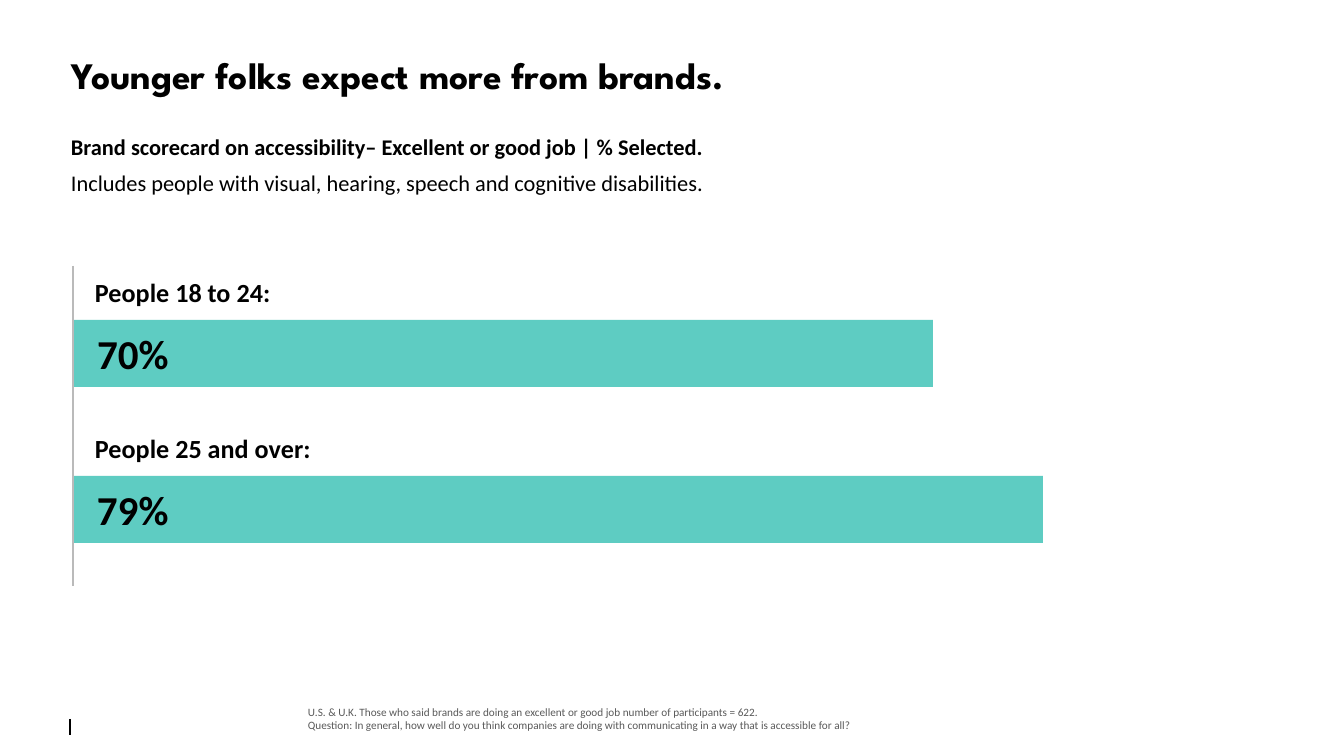
from lxml import etree
from pptx import Presentation
from pptx.dml.color import RGBColor
from pptx.enum.shapes import MSO_CONNECTOR, MSO_SHAPE
from pptx.enum.text import MSO_ANCHOR, MSO_AUTO_SIZE, PP_ALIGN
from pptx.oxml.ns import qn
from pptx.util import Pt

STRAIGHT = MSO_CONNECTOR.STRAIGHT
RECTANGLE = MSO_SHAPE.RECTANGLE
TOP, MIDDLE, BOTTOM = MSO_ANCHOR.TOP, MSO_ANCHOR.MIDDLE, MSO_ANCHOR.BOTTOM
NO_AUTOFIT = MSO_AUTO_SIZE.NONE
LEFT = PP_ALIGN.LEFT

BLACK = RGBColor(0x00, 0x00, 0x00)
GRAY = RGBColor(0x59, 0x59, 0x59)
AXIS_GRAY = RGBColor(0xBA, 0xBA, 0xBA)
TEAL = RGBColor(0x3B, 0xC1, 0xB5)

SLIDE_W, SLIDE_H = 1344, 756
MARGIN = 71
AXIS_X = 73
FIRST_BAR_Y, BAR_STEP, BAR_H = 320, 156, 67
PX_PER_PERCENT = 12.28
RESULTS = [("People 18 to 24:", 70), ("People 25 and over:", 79)]


def px(n):
    return round(n * 914400 / 134.4)


class Deck:
    heading_font = "League Spartan"
    body_font = "Calibri"

    def __init__(self):
        self.prs = Presentation()
        self.prs.slide_width, self.prs.slide_height = px(SLIDE_W), px(SLIDE_H)
        self.s = self.prs.slides.add_slide(self.prs.slide_layouts[5])

    def frame(self, sp, anchor=TOP, left=0, vertical=0):
        tf = sp.text_frame
        tf.word_wrap = True
        tf.auto_size = NO_AUTOFIT
        tf.vertical_anchor = anchor
        tf.margin_left, tf.margin_right = px(left), 0
        tf.margin_top = tf.margin_bottom = px(vertical)
        return tf

    def add_lines(self, tf, lines, size, color=BLACK, font=None, after=0):
        for i, (text, bold) in enumerate(lines):
            p = tf.add_paragraph() if i else tf.paragraphs[0]
            p.alignment = LEFT
            p.space_after = Pt(after)
            r = p.add_run()
            r.text = text
            r.font.name = font or self.body_font
            r.font.size = Pt(size)
            r.font.bold = bold
            r.font.color.rgb = color

    def title(self, text, x, y, w, h):
        sp = self.s.shapes.title
        sp.left, sp.top, sp.width, sp.height = map(px, (x, y, w, h))
        self.add_lines(self.frame(sp), [(text, True)], 20, font=self.heading_font)

    def text(self, lines, x, y, w, h, size, color=BLACK, anchor=TOP, vertical=0, after=0):
        sp = self.s.shapes.add_textbox(*map(px, (x, y, w, h)))
        tf = self.frame(sp, anchor, vertical=vertical)
        self.add_lines(tf, lines, size, color, after=after)
        return tf

    def bar(self, text, x, y, w, h):
        sp = self.s.shapes.add_shape(RECTANGLE, *map(px, (x, y, w, h)))
        sp.shadow.inherit = False
        sp.fill.solid()
        sp.fill.fore_color.rgb = TEAL
        color = sp._element.spPr.find(".//" + qn("a:srgbClr"))
        etree.SubElement(color, qn("a:alpha"), val="82000")
        sp.line.fill.background()
        self.add_lines(self.frame(sp, MIDDLE, left=24), [(text, True)], 22)

    def vline(self, x, top, bottom, color):
        line = self.s.shapes.add_connector(STRAIGHT, *map(px, (x, top, x, bottom)))
        line.line.color.rgb = color
        line.line.width = Pt(1.25)
        etree.SubElement(line._element.spPr, qn("a:effectLst"))


def main():
    deck = Deck()
    deck.vline(70, 719, 735, BLACK)
    deck.title("Younger folks expect more from brands.", MARGIN, 52, 1198, 82)
    subtitle = deck.text(
        [("Brand scorecard on accessibility– Excellent or good job | % Selected.", True),
         ("Includes people with visual, hearing, speech and cognitive disabilities.", False)],
        MARGIN, 136, 890, 82, 12, after=5)
    subtitle.paragraphs[0].line_spacing = 0.9
    for i, (group, percent) in enumerate(RESULTS):
        y = FIRST_BAR_Y + i * BAR_STEP
        deck.text([(group, True)], 95, y - 51, 288, 39, 14, vertical=7)
        deck.bar(f"{percent}%", AXIS_X, y, round(percent * PX_PER_PERCENT), BAR_H)
    deck.text(
        [("U.S. & U.K. Those who said brands are doing an excellent or good job "
          "number of participants = 622.", False),
         ("Question: In general, how well do you think companies are doing with "
          "communicating in a way that is accessible for all?", False)],
        308, 696, 870, 36, 6, GRAY, BOTTOM)
    deck.vline(AXIS_X, 266, 586, AXIS_GRAY)
    deck.prs.save("out.pptx")


if __name__ == "__main__":
    main()
